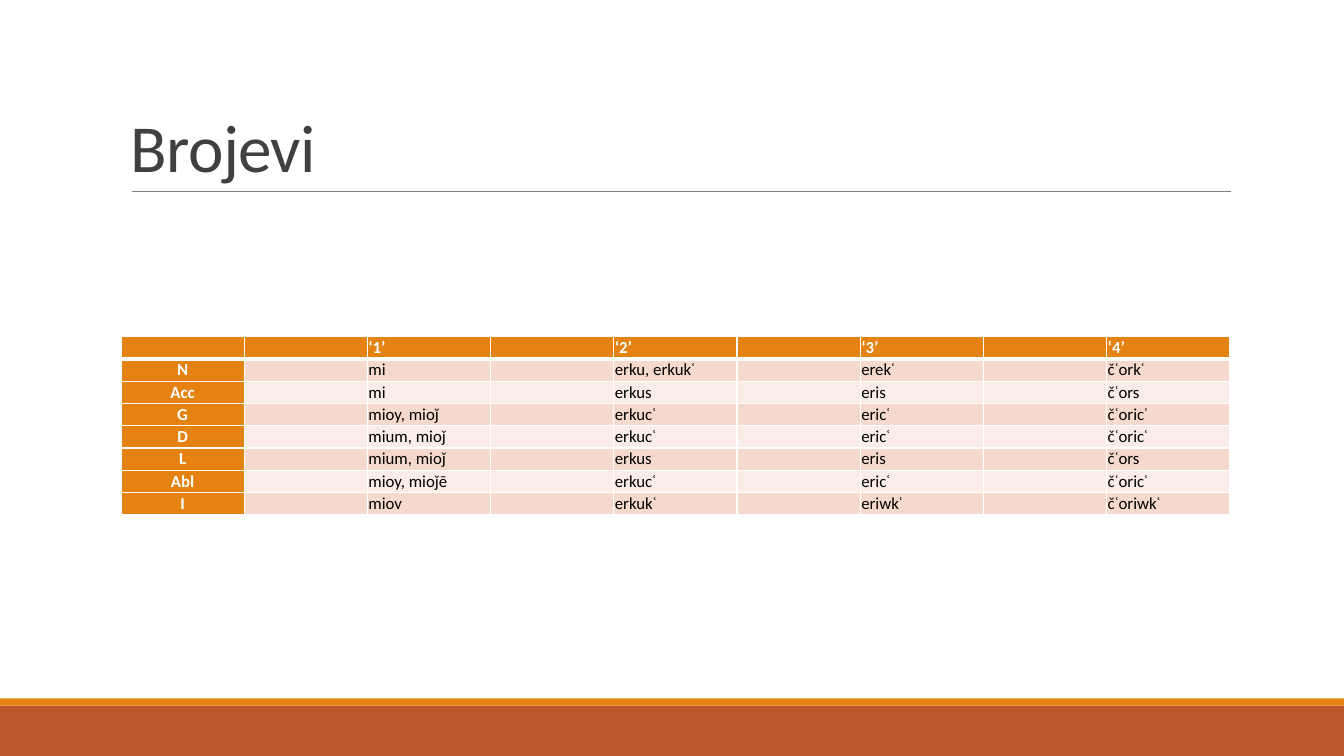
from lxml.etree import SubElement
from pptx import Presentation
from pptx.dml.color import RGBColor
from pptx.enum.shapes import MSO_CONNECTOR, MSO_SHAPE
from pptx.enum.text import MSO_ANCHOR, PP_ALIGN
from pptx.oxml.ns import qn
from pptx.util import Inches, Pt

TITLE = "Brojevi"
NUMERALS = ["‘1’", "‘2’", "‘3’", "‘4’"]
DECLENSION = [
    ("N", "mi", "erku, erkukʿ", "erekʿ", "čʿorkʿ"),
    ("Acc", "mi", "erkus", "eris", "čʿors"),
    ("G", "mioy, mioǰ", "erkucʿ", "ericʿ", "čʿoricʿ"),
    ("D", "mium, mioǰ", "erkucʿ", "ericʿ", "čʿoricʿ"),
    ("L", "mium, mioǰ", "erkus", "eris", "čʿors"),
    ("Abl", "mioy, mioǰē", "erkucʿ", "ericʿ", "čʿoricʿ"),
    ("I", "miov", "erkukʿ", "eriwkʿ", "čʿoriwkʿ"),
]
THEME = {
    "font": "Calibri", "title_size": 48, "cell_size": 12,
    "title": "404040", "rule": "808080", "accent": "E48312", "footer": "BD582C",
    "bands": ("F5D9CC", "FAEDE7"), "light": "FFFFFF", "dark": "000000",
}
WIDTH, HEIGHT = 13.33, 7.5
LEFT, CONTENT_WIDTH = 1.2, 11
TITLE_TOP, TITLE_BOTTOM = 0.31, 1.9
TABLE_TOP, TABLE_HEIGHT = 3.34, 1.77
FOOTER_TOP, STRIPE_HEIGHT = 7, 0.07
RULE_LEFT, RULE_RIGHT = 1.31, 12.21
CELL_INSET = 0.01


def color(name):
    return RGBColor.from_string(THEME.get(name, name))


def apply(target, formats):
    for key, value in formats.items():
        setattr(target, key, value)


def write(paragraph, text, size, ink, bold=False):
    run = paragraph.add_run()
    run.text = text
    apply(run.font, {"name": THEME["font"], "size": Pt(size), "bold": bold})
    run.font.color.rgb = color(ink)
    return run


def add_band(slide, top, height, fill):
    band = slide.shapes.add_shape(
        MSO_SHAPE.RECTANGLE, 0, Inches(top), Inches(WIDTH), Inches(height))
    band.shadow.inherit = False
    band.fill.solid()
    band.fill.fore_color.rgb = color(fill)
    band.line.fill.background()


def add_title(slide):
    heading = slide.shapes.add_textbox(
        Inches(LEFT), Inches(TITLE_TOP),
        Inches(CONTENT_WIDTH), Inches(TITLE_BOTTOM - TITLE_TOP))
    apply(heading.text_frame, {"word_wrap": True, "vertical_anchor": MSO_ANCHOR.BOTTOM})
    paragraph = heading.text_frame.paragraphs[0]
    paragraph.line_spacing = 0.85
    run = write(paragraph, TITLE, THEME["title_size"], "title")
    run.font._element.set("spc", "-50")

    rule = slide.shapes.add_connector(
        MSO_CONNECTOR.STRAIGHT, Inches(RULE_LEFT), Inches(TITLE_BOTTOM),
        Inches(RULE_RIGHT), Inches(TITLE_BOTTOM))
    rule.line.width = Pt(0.5)
    rule.line.color.rgb = color("rule")
    SubElement(rule._element.spPr, qn("a:effectLst"))


def add_borders(cell, row):
    widths = {"L": 1, "R": 1, "T": 3 if row == 1 else 1, "B": 3 if row == 0 else 1}
    properties = cell._tc.get_or_add_tcPr()
    for side, width in widths.items():
        border = SubElement(properties, qn(f"a:ln{side}"), w=str(Pt(width)))
        fill = SubElement(border, qn("a:solidFill"))
        SubElement(fill, qn("a:srgbClr"), val=THEME["light"])


def add_declension(slide):
    rows = [("", *NUMERALS), *DECLENSION]
    column_count = 2 * len(NUMERALS) + 1
    table = slide.shapes.add_table(
        len(rows), column_count, Inches(LEFT), Inches(TABLE_TOP),
        Inches(CONTENT_WIDTH), Inches(TABLE_HEIGHT)).table
    inset = Inches(CELL_INSET)
    for r, forms in enumerate(rows):
        for c in range(column_count):
            cell = table.cell(r, c)
            heading = r == 0 or c == 0
            apply(cell, {f"margin_{side}": inset
                         for side in ("left", "right", "top", "bottom")})
            add_borders(cell, r)
            cell.fill.solid()
            cell.fill.fore_color.rgb = color(
                "accent" if heading else THEME["bands"][(r - 1) % 2])
            paragraph = cell.text_frame.paragraphs[0]
            paragraph.alignment = PP_ALIGN.LEFT if c else PP_ALIGN.CENTER
            form = "" if c % 2 else forms[c // 2]
            if form:
                write(paragraph, form, THEME["cell_size"],
                      "light" if heading else "dark", heading)
            else:
                SubElement(paragraph._p, qn("a:endParaRPr"),
                           sz=str(THEME["cell_size"] * 100))


def main():
    deck = Presentation()
    apply(deck, {"slide_width": Inches(WIDTH), "slide_height": Inches(HEIGHT)})
    slide = deck.slides.add_slide(deck.slide_layouts[6])
    add_band(slide, FOOTER_TOP, HEIGHT - FOOTER_TOP, "footer")
    add_band(slide, FOOTER_TOP - STRIPE_HEIGHT, STRIPE_HEIGHT, "accent")
    add_title(slide)
    add_declension(slide)
    deck.save("out.pptx")


if __name__ == "__main__":
    main()
